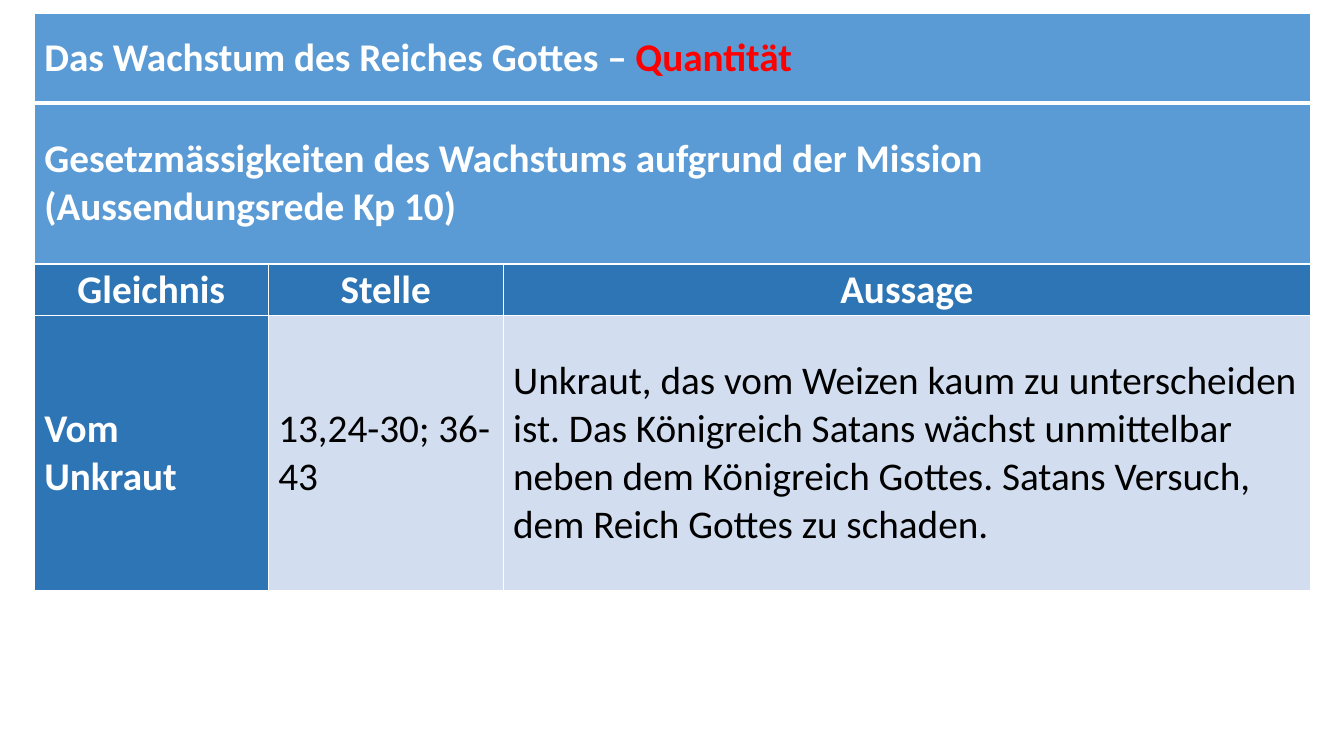
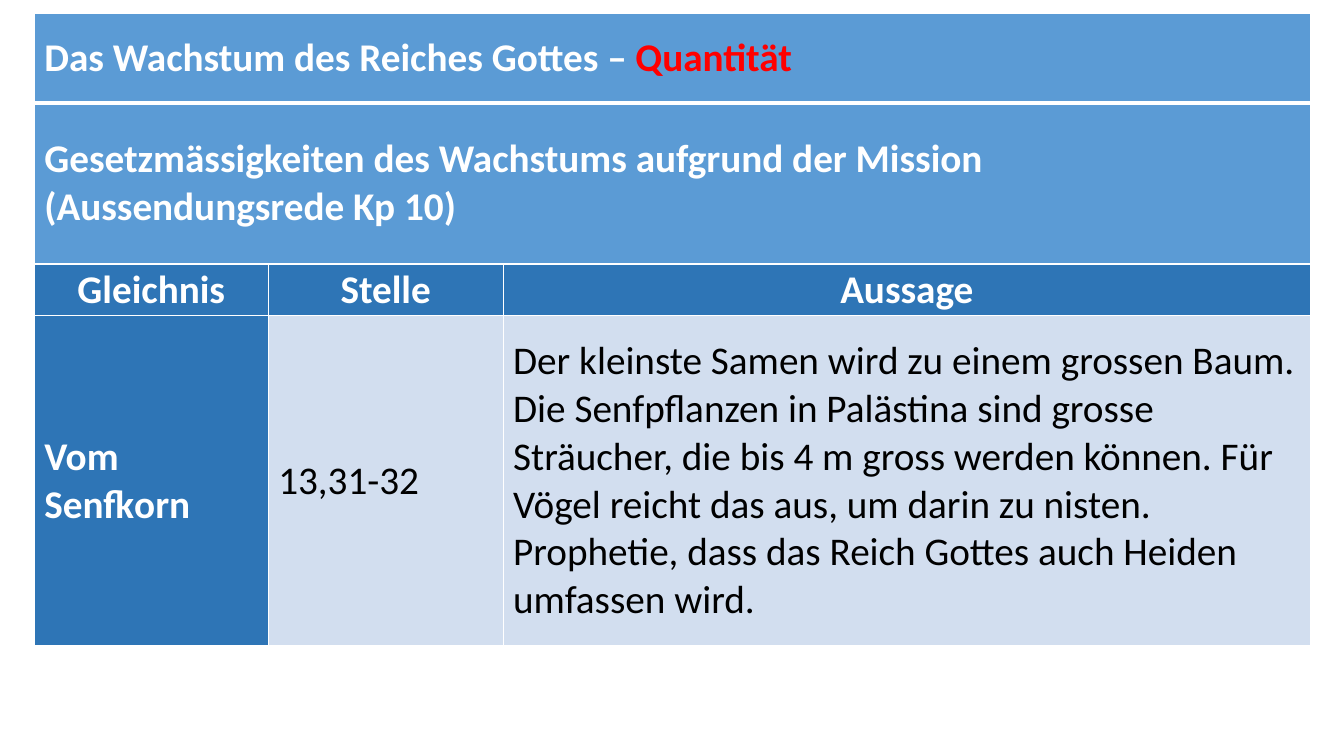
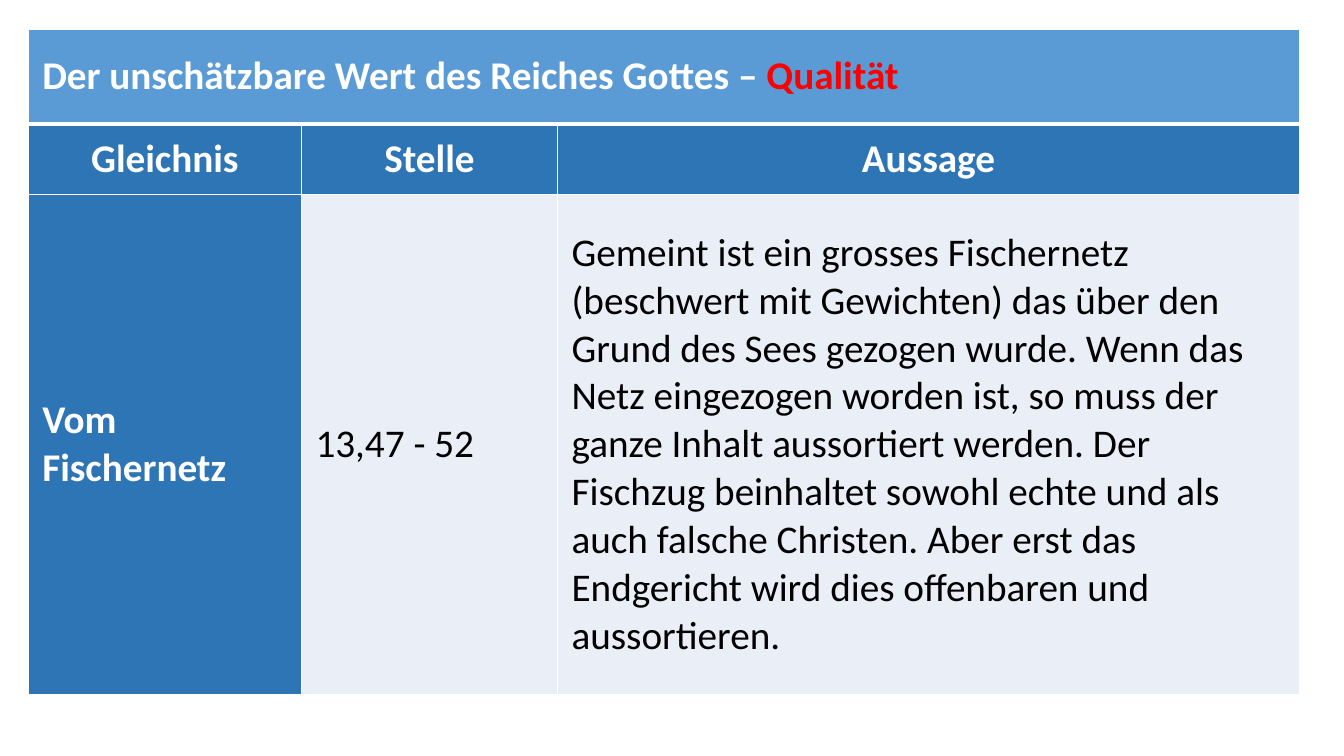
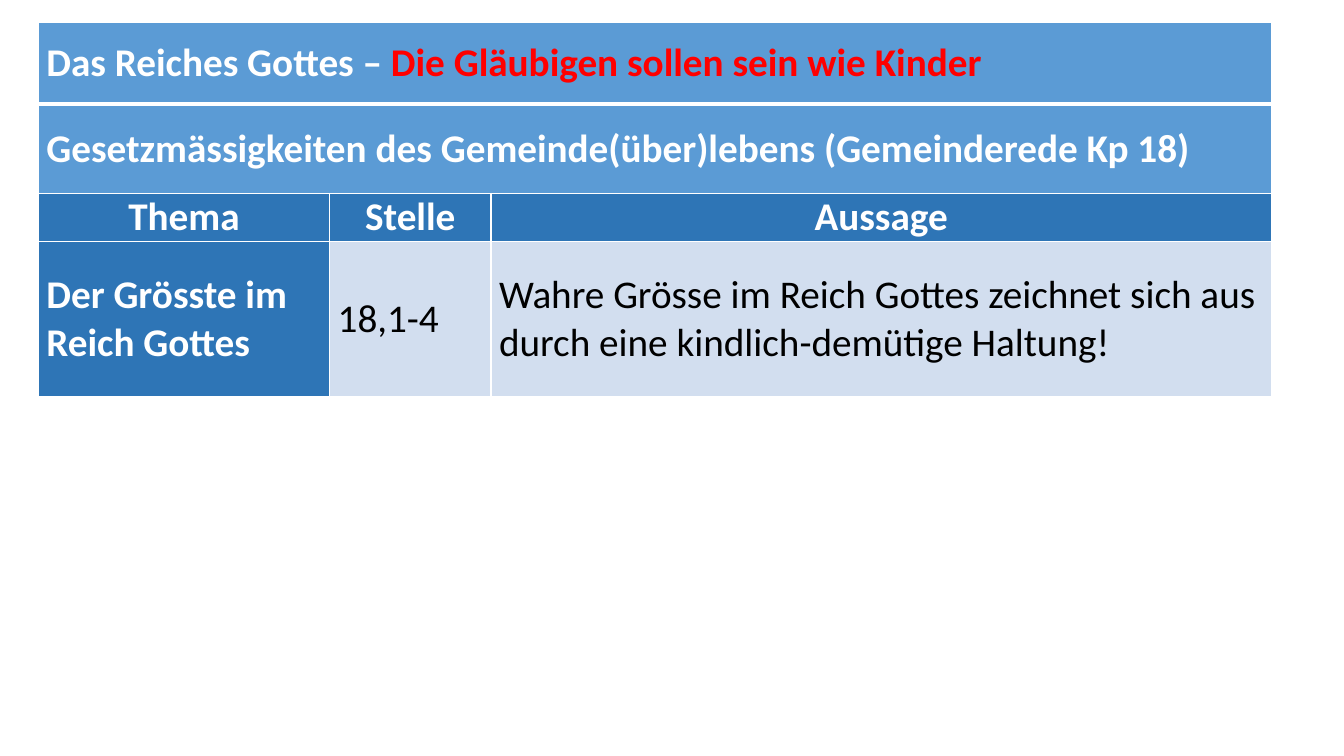
from dataclasses import dataclass

from lxml import etree
from pptx import Presentation
from pptx.dml.color import RGBColor
from pptx.enum import text
from pptx.oxml import ns
from pptx.slide import Slide
from pptx.table import _Cell
from pptx.util import Inches, Pt


@dataclass(frozen=True)
class Theme:
    font: str = "Calibri"
    size: float = 28
    white: str = "FFFFFF"
    black: str = "000000"
    accent: str = "FF0000"
    heading: str = "5B9BD5"
    label: str = "2E75B6"
    band: str = "D2DEEF"
    light_band: str = "EAEFF7"
    thin: float = 1
    thick: float = 3


THEME = Theme()


@dataclass(frozen=True)
class Parable:
    """One lesson table: title, optional subtitle, column labels and one entry."""
    left: float
    top: float
    column_widths: tuple[float, ...]
    row_heights: tuple[float, ...]
    inset: float
    title: str
    highlight: str
    entry: tuple[str, str, str]
    subtitle: str = ""
    labels: tuple[str, str, str] = ("Gleichnis", "Stelle", "Aussage")
    band: str = THEME.band


GROWTH_COLUMNS = (2.32, 2.33, 8.01)
GROWTH_TITLE = "Das Wachstum des Reiches Gottes – "
GROWTH_SUBTITLE = ("Gesetzmässigkeiten des Wachstums aufgrund der Mission\n"
                   "(Aussendungsrede Kp 10)")

PARABLES = (
    Parable(
        0.34, 0.13, GROWTH_COLUMNS, (0.89, 1.6, 0.51, 2.73), 0.1,
        GROWTH_TITLE, "Quantität",
        ("Vom Unkraut", "13,24-30; 36-43",
         "Unkraut, das vom Weizen kaum zu unterscheiden ist. Das Königreich "
         "Satans wächst unmittelbar neben dem Königreich Gottes. Satans "
         "Versuch, dem Reich Gottes zu schaden."),
        GROWTH_SUBTITLE),
    Parable(
        0.34, 0.13, GROWTH_COLUMNS, (0.89, 1.6, 0.51, 3.28), 0.1,
        GROWTH_TITLE, "Quantität",
        ("Vom Senfkorn", "13,31-32",
         "Der kleinste Samen wird zu einem grossen Baum. Die Senfpflanzen in "
         "Palästina sind grosse Sträucher, die bis 4 m gross werden können. "
         "Für Vögel reicht das aus, um darin zu nisten. Prophetie, dass das "
         "Reich Gottes auch Heiden umfassen wird."),
        GROWTH_SUBTITLE),
    Parable(
        0.28, 0.29, (2.71, 2.54, 7.36), (0.94, 0.7, 4.96), 0.14,
        "Der unschätzbare Wert des Reiches Gottes – ", "Qualität",
        ("Vom\nFischernetz", "13,47 - 52",
         "Gemeint ist ein grosses Fischernetz (beschwert mit Gewichten) das "
         "über den Grund des Sees gezogen wurde. Wenn das Netz eingezogen "
         "worden ist, so muss der ganze Inhalt aussortiert werden. Der "
         "Fischzug beinhaltet sowohl echte und als auch falsche Christen. "
         "Aber erst das Endgericht wird dies offenbaren und aussortieren."),
        band=THEME.light_band),
    Parable(
        0.38, 0.22, (2.89, 1.6, 7.74), (0.81, 0.89, 0.47, 1.54), 0.08,
        "Das Reiches Gottes – ", "Die Gläubigen sollen sein wie Kinder",
        ("Der Grösste im Reich Gottes", "18,1-4",
         "Wahre Grösse im Reich Gottes zeichnet sich aus durch eine "
         "kindlich-demütige Haltung!"),
        "Gesetzmässigkeiten des Gemeinde(über)lebens (Gemeinderede Kp 18)",
        ("Thema", "Stelle", "Aussage")),
)


def set_borders(cell: _Cell, top: float, bottom: float) -> None:
    """Draw white cell borders; the side borders are always thin."""
    properties = cell._tc.get_or_add_tcPr()
    widths = {"lnL": THEME.thin, "lnR": THEME.thin, "lnT": top, "lnB": bottom}
    for position, (tag, width) in enumerate(widths.items()):
        line = etree.Element(ns.qn(f"a:{tag}"), w=str(Pt(width)))
        fill = etree.SubElement(line, ns.qn("a:solidFill"))
        etree.SubElement(fill, ns.qn("a:srgbClr"), val=THEME.white)
        properties.insert(position, line)


def format_text(cell: _Cell, color: str, bold: bool, centered: bool = False) -> None:
    for paragraph in cell.text_frame.paragraphs:
        paragraph.alignment = (text.PP_ALIGN.CENTER if centered
                               else text.PP_ALIGN.LEFT)
        for run in paragraph.runs:
            run.font.name = THEME.font
            run.font.size = Pt(THEME.size)
            run.font.bold = bold
            run.font.color.rgb = RGBColor.from_string(color)


def add_parable_table(slide: Slide, parable: Parable) -> None:
    headings = [parable.title] + ([parable.subtitle] if parable.subtitle else [])
    rows = [(heading, "", "") for heading in headings]
    rows += [parable.labels, parable.entry]
    label_row = len(headings)

    table = slide.shapes.add_table(
        len(rows), len(parable.column_widths),
        Inches(parable.left), Inches(parable.top),
        Inches(sum(parable.column_widths)), Inches(sum(parable.row_heights))).table
    table.horz_banding = False
    for column, width in zip(table.columns, parable.column_widths):
        column.width = Inches(width)
    for row, height in zip(table.rows, parable.row_heights):
        row.height = Inches(height)
    for row_index in range(label_row):
        table.cell(row_index, 0).merge(table.cell(row_index, 2))

    for row_index, row_texts in enumerate(rows):
        for column_index, cell_text in enumerate(row_texts):
            cell = table.cell(row_index, column_index)
            is_body = row_index > label_row and column_index > 0
            if row_index < label_row:
                fill = THEME.heading
            else:
                fill = parable.band if is_body else THEME.label
            cell.fill.solid()
            cell.fill.fore_color.rgb = RGBColor.from_string(fill)
            set_borders(cell,
                        top=THEME.thick if row_index == 1 else THEME.thin,
                        bottom=THEME.thick if row_index == 0 else THEME.thin)
            cell.vertical_anchor = text.MSO_ANCHOR.MIDDLE
            cell.margin_left = cell.margin_right = Inches(parable.inset)
            cell.margin_top = cell.margin_bottom = 0
            if cell_text:
                cell.text_frame.text = cell_text
                if row_index == 0:
                    cell.text_frame.paragraphs[0].add_run().text = parable.highlight
                format_text(cell, THEME.black if is_body else THEME.white,
                            not is_body, row_index == label_row)

    highlight = table.cell(0, 0).text_frame.paragraphs[0].runs[-1]
    highlight.font.color.rgb = RGBColor.from_string(THEME.accent)


def main() -> None:
    presentation = Presentation()
    presentation.slide_width = Inches(13.33)
    presentation.slide_height = Inches(7.5)
    blank_layout = presentation.slide_layouts[6]
    for parable in PARABLES:
        add_parable_table(presentation.slides.add_slide(blank_layout), parable)
    presentation.save("out.pptx")


if __name__ == "__main__":
    main()
